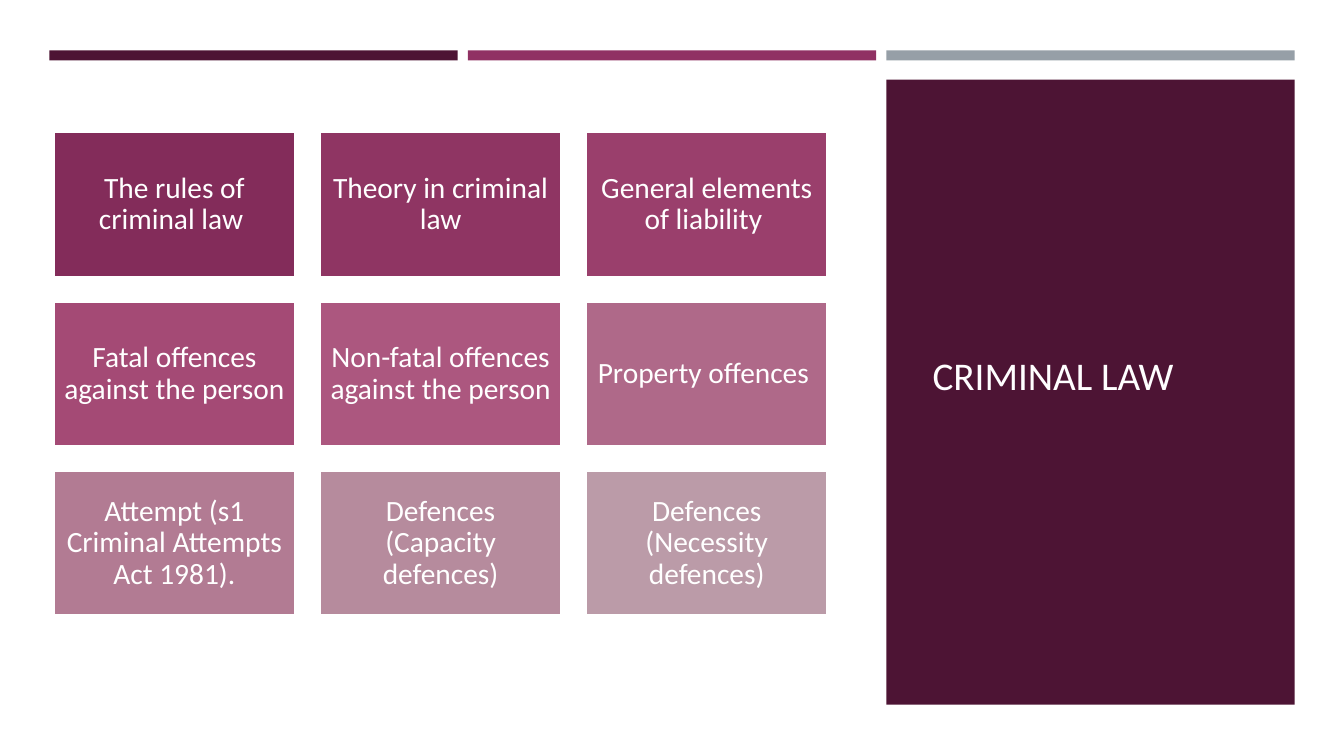
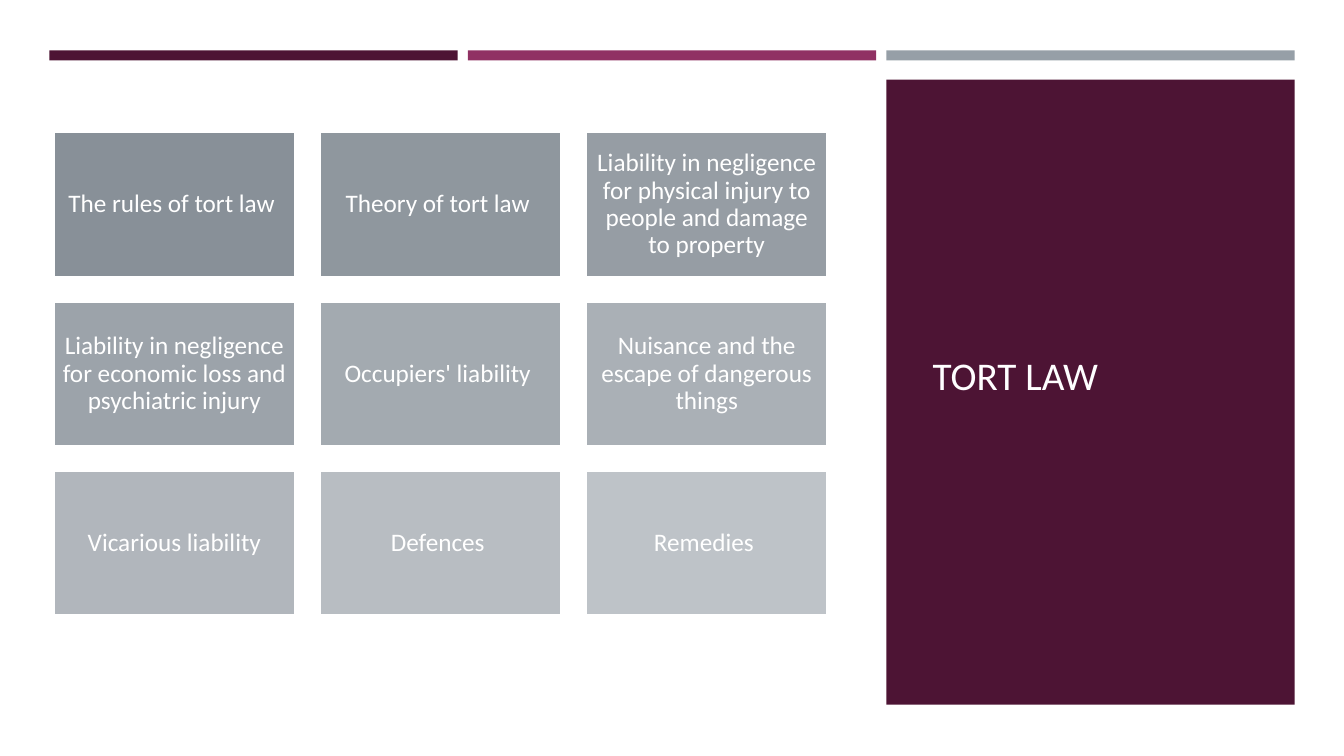
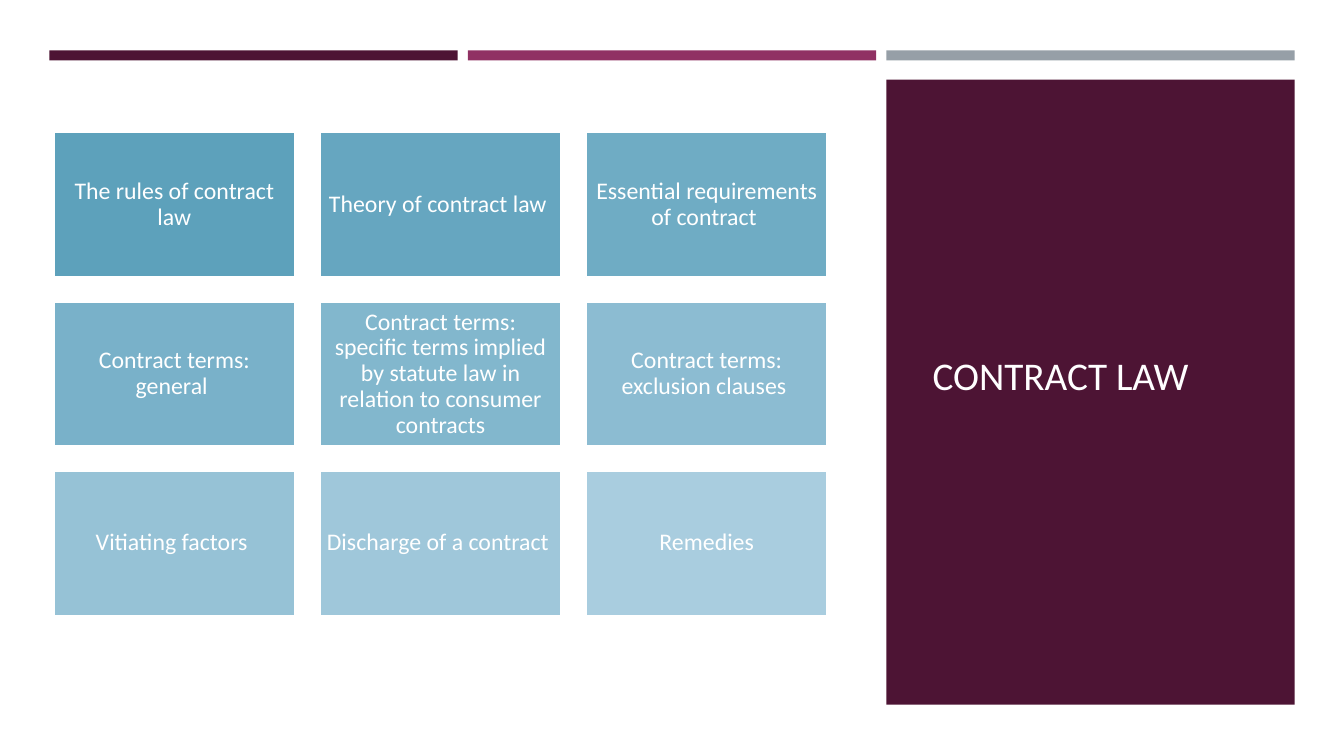
from pptx import Presentation
from pptx.dml.color import RGBColor
from pptx.enum.shapes import MSO_SHAPE
from pptx.enum.text import MSO_ANCHOR, MSO_AUTO_SIZE, PP_ALIGN
from pptx.util import Inches, Pt

RECT = MSO_SHAPE.RECTANGLE
MIDDLE = MSO_ANCHOR.MIDDLE
NO_FIT = MSO_AUTO_SIZE.NONE
LEFT, CENTER = PP_ALIGN.LEFT, PP_ALIGN.CENTER

FONT = "Calibri"
COLORS = {"plum": "4D1434", "rose": "903163", "grey": "969FA7",
          "white": "FFFFFF", "title": "FFFEFF"}

# Grids in inches: three page columns, and three by three tiles
PAGE_X, PAGE_W, PAGE_GAP = 0.49, 4.05, 0.1
TILE_X, TILE_Y, TILE_W, TILE_H, TILE_GAP = 0.53, 1.31, 2.4, 1.44, 0.24
PANEL_X = PAGE_X + 2 * (PAGE_W + PAGE_GAP)

# Title, text size, inset, line width, then fill and text of each tile
TOPICS = [
    ("CRIMINAL LAW", 21, 0.09, 2, [
        ("832C5A", "The rules of criminal law "),
        ("8F3563", "Theory in criminal law"),
        ("9A3F6C", "General elements of liability "),
        ("A44A75", "Fatal offences against the person "),
        ("AC577F", "Non-fatal offences against the person "),
        ("AF6989", "Property offences "),
        ("B27B93", "Attempt (s1 Criminal Attempts Act 1981)."),
        ("B68B9D", "Defences (Capacity defences)"),
        ("BB9BA8", "Defences (Necessity defences)")]),
    ("TORT LAW", 18, 0.07, 2, [
        ("889098", "The rules of tort law "),
        ("8F979E", "Theory of tort law "),
        ("969DA4", "Liability in negligence for physical injury to people "
                   "and damage to property"),
        ("9CA3AA", "Liability in negligence for economic loss and "
                   "psychiatric injury"),
        ("A3AAB0", "Occupiers' liability "),
        ("AAB0B6", "Nuisance and the escape of dangerous things"),
        ("B1B6BC", "Vicarious liability"),
        ("B8BDC2", "Defences "),
        ("BEC3C8", "Remedies ")]),
    ("CONTRACT LAW", 17, 0.07, 1.75, [
        ("5DA1BB", "The rules of contract law"),
        ("66A6C0", "Theory of contract law "),
        ("6FACC4", "Essential requirements of contract "),
        ("79B1C9", "Contract terms: general "),
        ("82B7CD", "Contract terms: specific terms implied by statute law "
                   "in relation to consumer contracts"),
        ("8CBCD2", "Contract terms: exclusion clauses "),
        ("96C2D6", "Vitiating factors "),
        ("9FC7DA", "Discharge of a contract "),
        ("A9CDDF", "Remedies")]),
]


def write(shape, text, size, color, align=CENTER, inset=0.1, space=1.0):
    frame = shape.text_frame
    frame.word_wrap = True
    frame.auto_size = NO_FIT
    frame.vertical_anchor = MIDDLE
    frame.margin_left = frame.margin_right = Inches(inset)
    frame.margin_top = frame.margin_bottom = Inches(inset)
    para = frame.paragraphs[0]
    para.alignment = align
    para.line_spacing = space
    run = para.add_run()
    run.text = text
    run.font.name = FONT
    run.font.size = Pt(size)
    run.font.color.rgb = RGBColor.from_string(color)


def block(slide, x, y, w, h, fill, line=0):
    shape = slide.shapes.add_shape(RECT, Inches(x), Inches(y), Inches(w), Inches(h))
    shape.shadow.inherit = False
    shape.fill.solid()
    shape.fill.fore_color.rgb = RGBColor.from_string(fill)
    if line:
        shape.line.color.rgb = RGBColor.from_string(COLORS["white"])
        shape.line.width = Pt(line)
    else:
        shape.line.fill.background()
    return shape


deck = Presentation()
deck.slide_width, deck.slide_height = Inches(13.33), Inches(7.5)
layout = deck.slide_layouts[5]

# Title place, inherited by every slide
head = layout.placeholders[0]
head.left, head.top = Inches(9.15), Inches(1.14)
head.width, head.height = Inches(3.34), Inches(5.15)

slides = [deck.slides.add_slide(layout) for _ in TOPICS]

# Bands and panel: drawn once, then moved to the layout
parts = [block(slides[0], PAGE_X + i * (PAGE_W + PAGE_GAP), 0.5, PAGE_W, 0.1, COLORS[name])
         for i, name in enumerate(("plum", "rose", "grey"))]
parts.append(block(slides[0], PANEL_X, 0.79, PAGE_W, 6.2, COLORS["plum"]))
for part in parts:
    layout.element.cSld.spTree.append(part.element)

# Titles and tiles
for slide, (title, size, inset, line, tiles) in zip(slides, TOPICS):
    write(slide.shapes.title, title, 28, COLORS["title"], align=LEFT)
    for i, (fill, text) in enumerate(tiles):
        row, col = divmod(i, 3)
        tile = block(slide, TILE_X + col * (TILE_W + TILE_GAP),
                     TILE_Y + row * (TILE_H + TILE_GAP), TILE_W, TILE_H, fill, line)
        write(tile, text, size, COLORS["white"], inset=inset, space=0.9)

deck.save("out.pptx")
